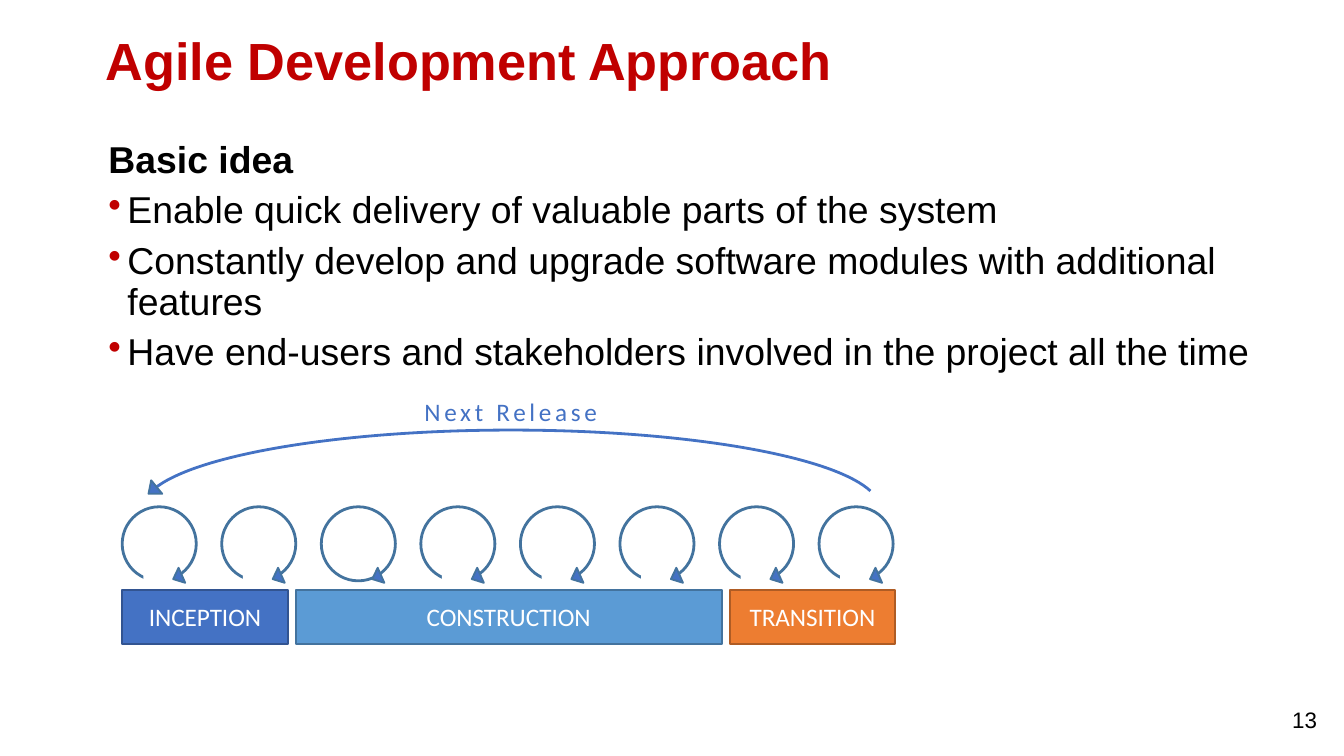
import pptx
import pptx.util
import pptx.dml.color
import pptx.enum.shapes
import pptx.enum.text
import lxml.etree

Cm, Pt = pptx.util.Cm, pptx.util.Pt
Kind = pptx.enum.shapes.MSO_SHAPE
Align = pptx.enum.text.PP_ALIGN
Anchor = pptx.enum.text.MSO_ANCHOR
RED, BLUE, EDGE, WHITE = "C00000", "4472C4", "43739E", "FFFFFF"


def color(code):
    """Turn a hex string into a colour."""
    return pptx.dml.color.RGBColor.from_string(code)


def bullet(para, hue):
    """Give a paragraph a coloured bullet and a hanging indent."""
    props = para._p.get_or_add_pPr()
    props.set("marL", str(Cm(0.36)))
    props.set("indent", str(-Cm(0.36)))
    space = props.nsmap["a"]
    mark = lxml.etree.SubElement(props, f"{{{space}}}buClr")
    lxml.etree.SubElement(mark, f"{{{space}}}srgbClr", val=hue)
    lxml.etree.SubElement(props, f"{{{space}}}buChar", char="•")


def write(para, text, size=20, face="Arial", hue="000000", bold=False,
          align=Align.LEFT, lines=None, before=None, dot=None, track=None):
    """Put formatted text into a paragraph."""
    if dot:
        bullet(para, dot)
    para.alignment = align
    if lines:
        para.line_spacing = lines
    if before:
        para.space_before = Pt(before)
    run = para.add_run()
    run.text = text
    font = run.font
    font.size, font.name, font.bold = Pt(size), face, bold
    font.color.rgb = color(hue)
    if track:
        run._r.get_or_add_rPr().set("spc", str(track * 100))


def frame(shapes, box, anchor=Anchor.TOP):
    """Add a wrapping text box and return its text frame."""
    area = shapes.add_textbox(*map(Cm, box)).text_frame
    area.word_wrap = True
    area.vertical_anchor = anchor
    return area


def draw(shapes, kind, box, fill=None, line=None, width=1, turn=0):
    """Add a preset shape with its fill and outline."""
    shape = shapes.add_shape(kind, *map(Cm, box))
    shape.shadow.inherit = False
    shape.rotation = turn
    if fill:
        shape.fill.solid()
        shape.fill.fore_color.rgb = color(fill)
    else:
        shape.fill.background()
    if line:
        shape.line.color.rgb = color(line)
        shape.line.width = Pt(width)
    else:
        shape.line.fill.background()
    return shape


def title(shapes, box):
    """Place the slide title."""
    area = frame(shapes, box, Anchor.MIDDLE)
    write(area.paragraphs[0], "Agile Development Approach", size=28,
          hue=RED, bold=True, lines=0.9)


def body(shapes, box):
    """Place the heading and its bullet points."""
    area = frame(shapes, box)
    write(area.paragraphs[0], "Basic idea", bold=True, lines=0.9)
    for point in (
        "Enable quick delivery of valuable parts of the system",
        "Constantly develop and upgrade software modules with additional features",
        "Have end-users and stakeholders involved in the project all the time",
    ):
        write(area.add_paragraph(), point, lines=0.9, before=5.6, dot=RED)


def number(shapes, box):
    """Place the slide number."""
    area = frame(shapes, box, Anchor.MIDDLE)
    area.margin_right = Cm(0.51)
    write(area.paragraphs[0], "13", size=12, align=Align.RIGHT)


def cycle(shapes, left, top, gap):
    """Draw one iteration loop, open at the bottom if gap is set."""
    draw(shapes, Kind.OVAL, (left, top, 1.4, 1.4), line=EDGE, width=1.5)
    if gap:
        draw(shapes, Kind.RECTANGLE, (left + 0.4, top + 1.22, 0.61, 0.36), WHITE)
    draw(shapes, Kind.ISOSCELES_TRIANGLE, (left + 0.89, top + 1.24, 0.31, 0.18),
         BLUE, EDGE, turn=246.3)


def phases(shapes, left, top, height):
    """Draw the row of phase bars."""
    for name, width, fill, line in (
        ("INCEPTION", 3.13, BLUE, "325491"),
        ("CONSTRUCTION", 8.05, "5B9BD5", EDGE),
        ("TRANSITION", 3.13, "ED7D31", "AF5C24"),
    ):
        bar = draw(shapes, Kind.RECTANGLE, (left, top, width, height), fill, line)
        area = bar.text_frame
        area.vertical_anchor = Anchor.MIDDLE
        area.margin_left = area.margin_right = 0
        write(area.paragraphs[0], name, size=13.5, face="Calibri",
              hue=WHITE, align=Align.CENTER)
        left += width + 0.15


def release(shapes, left, top):
    """Draw the return arc with its arrowhead and label."""
    arc = draw(shapes, Kind.ARC, (left + 0.38, top + 0.76, 13.94, 2.97),
               line=BLUE, width=1.5)
    arc.adjustments[0], arc.adjustments[1] = 109.63, 214.31
    draw(shapes, Kind.ISOSCELES_TRIANGLE, (left + 0.41, top + 1.8, 0.33, 0.2),
         BLUE, EDGE, turn=230.6)
    area = frame(shapes, (left + 3.74, top, 7.21, 0.84))
    write(area.paragraphs[0], "Next Release", size=13.5, face="Calibri",
          hue=BLUE, align=Align.CENTER, track=2)


def diagram(shapes, box):
    """Draw the release diagram: loops, phases and return arc."""
    left, top, width, height = box
    group = shapes.add_group_shape().shapes
    step = (width - 1.4) / 7
    for index in range(8):
        cycle(group, left + index * step, top + 2.21, gap=index != 2)
    phases(group, left, top + height - 1.02, 1.02)
    release(group, left, top)


def main():
    """Build and save the slide."""
    deck = pptx.Presentation()
    deck.slide_width, deck.slide_height = Cm(25.4), Cm(14.29)
    shapes = deck.slides.add_slide(deck.slide_layouts[6]).shapes
    title(shapes, (1.75, 0.41, 22, 1.6))
    body(shapes, (1.8, 2.54, 22.68, 6.86))
    number(shapes, (23.65, 13.23, 1.75, 0.76))
    diagram(shapes, (2.31, 7.37, 14.57, 4.8))
    deck.save("out.pptx")


if __name__ == "__main__":
    main()
